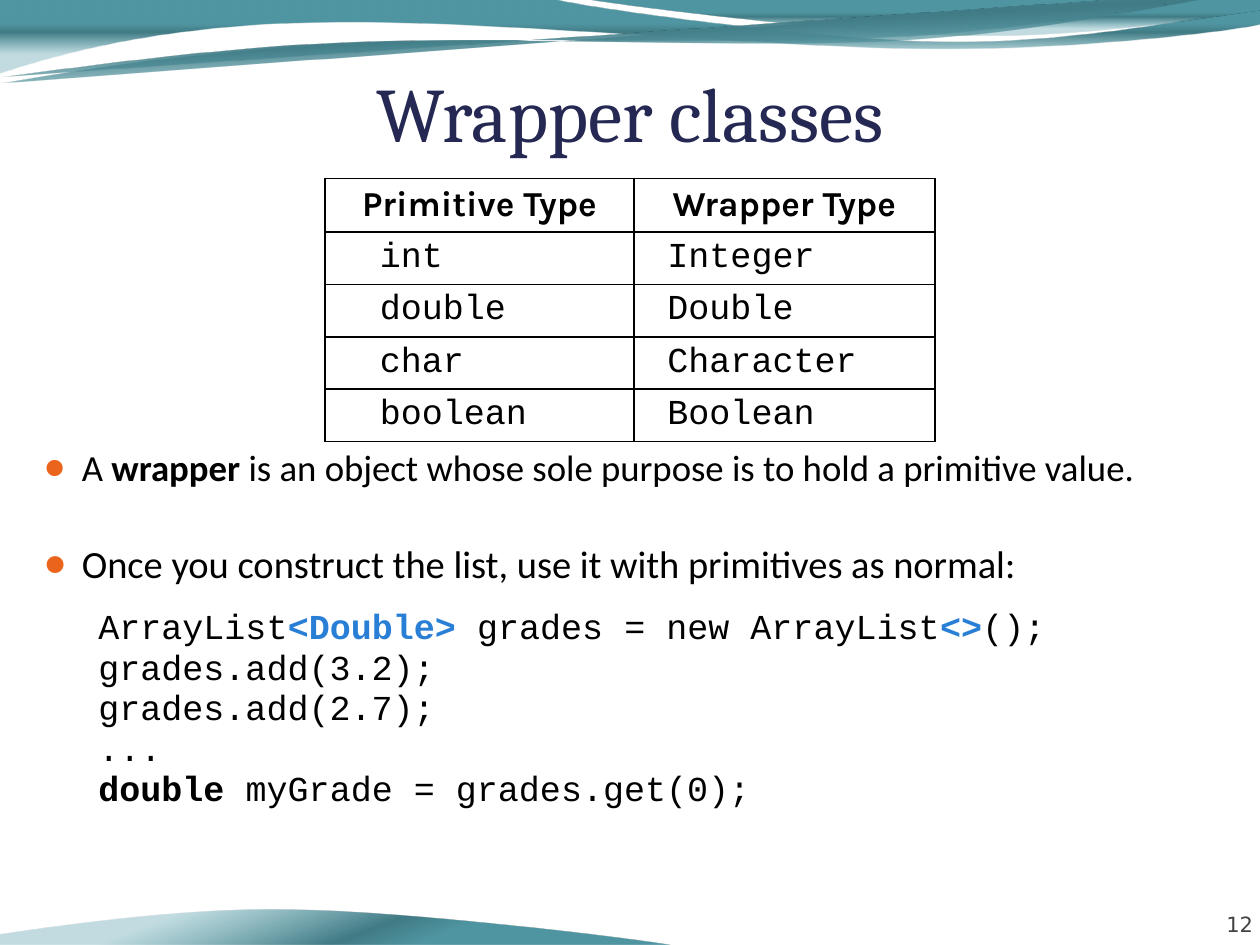
"""Build the slide on wrapper classes."""
import pptx
import pptx.dml.color
import pptx.enum.text
import pptx.oxml
import pptx.oxml.ns
import pptx.util

Pt = pptx.util.Pt
RGB = pptx.dml.color.RGBColor
ALIGN = pptx.enum.text.PP_ALIGN
ANCHOR = pptx.enum.text.MSO_ANCHOR
NS = pptx.oxml.ns.nsdecls("a")
BLACK = RGB(0, 0, 0)
NAVY = RGB(0x24, 0x28, 0x52)
BLUE = RGB(0x29, 0x7F, 0xD5)
GREY = RGB(0x42, 0x42, 0x42)
ORANGE = RGB(0xEB, 0x64, 0x1B)
STOPS = [
    (33, RGB(0x50, 0x96, 0xA2), 100),
    (44, RGB(0x41, 0x7B, 0x85), 100),
    (74, RGB(0x5A, 0xA2, 0xAE), 37),
]
CODE = "Courier New"

TITLE = "Wrapper classes"
NUMBER = "12"
TYPES = [
    ("Primitive Type", "Wrapper Type"),
    ("int", "Integer"),
    ("double", "Double"),
    ("char", "Character"),
    ("boolean", "Boolean"),
]
POINTS = [
    (["A ", ("wrapper", BLACK),
      " is an object whose sole purpose is to hold a primitive value."], 21, 0),
    (["Once you construct the list, use it with primitives as normal:"], 22, 29.6),
]
LINES = [
    ["ArrayList", ("<Double>", BLUE), " grades = new ArrayList", ("<>", BLUE), "();"],
    ["grades.add(3.2);"],
    ["grades.add(2.7);"],
    ["..."],
    [("double ", BLACK), "myGrade = grades.get(0);"],
]
WAVES = [
    (0, 90, True, [
        (0, 0), (317, 0), (343, 6, 478, 24, 546, 24), (615, 24, 690, 10, 720, 4),
        (721, 14), (708, 17, 626, 28, 537, 28), (448, 28, 275, 11, 185, 13),
        (93, 14, 33, 31, -1, 42), (0, 0)]),
    (0, 90, True, [
        (336, 0), (359, 4, 485, 19, 549, 20), (613, 22, 692, 10, 720, 6), (720, 0)]),
    (357.3, 90, False, [
        (0, 30), (35.5, 25.7, 115, 16.4, 201, 17),
        (287, 16.5, 427, 31, 514, 30.2), (600, 29.3, 679, 14.9, 721, 10.9)]),
    (357.3, 90, False, [
        (0, 27), (34, 24.7, 119, 15.6, 205, 16.6),
        (291, 17.7, 430, 29.3, 516, 28.3), (602, 27.3, 679, 14, 721, 10.9)]),
    (180, 70, True, [
        (-1, 518), (21, 522, 148, 537, 212, 538), (276, 540, 355, 528, 383, 524),
        (383, 518)]),
]


def put(para, parts, font=CODE, size=20, color=BLACK, bold=False,
        align=ALIGN.LEFT, left=0, hang=0, before=0, line=None, dot=False):
    para.alignment = align
    para.space_before = Pt(before)
    if line:
        para.line_spacing = line
    props = para._p.get_or_add_pPr()
    props.set("marL", str(Pt(left)))
    props.set("indent", str(Pt(-hang)))
    marks = ["<a:buNone %s/>" % NS]
    if dot:
        marks = [f'<a:buClr {NS}><a:srgbClr val="{ORANGE}"/></a:buClr>',
                 f'<a:buSzPct {NS} val="95000"/>',
                 f'<a:buFont {NS} typeface="Calibri"/>',
                 f'<a:buChar {NS} char="●"/>']
    for mark in marks:
        props.append(pptx.oxml.parse_xml(mark))
    for part in parts:
        words, tint = (part, None) if isinstance(part, str) else part
        run = para.add_run()
        run.text = words
        run.font.name = font
        run.font.size = Pt(size)
        run.font.bold = bold or tint is not None
        run.font.color.rgb = tint or color


def place(shape, left, top, width, height):
    shape.left, shape.top = Pt(left), Pt(top)
    shape.width, shape.height = Pt(width), Pt(height)


def inset(frame, left, top, right, bottom):
    frame.margin_left, frame.margin_top = Pt(left), Pt(top)
    frame.margin_right, frame.margin_bottom = Pt(right), Pt(bottom)
    frame.word_wrap = True
    frame.auto_size = pptx.enum.text.MSO_AUTO_SIZE.NONE


def add_wave(slide, depth, turn, angle, close, parts):
    spots = [(Pt(p[i]), Pt(p[i + 1])) for p in parts for i in range(0, len(p), 2)]
    pen = slide.shapes.build_freeform(*spots[0])
    pen.add_line_segments(spots[1:], close=close)
    wave = pen.convert_to_shape()
    props = wave._element.spPr
    steps = iter(list(props.iter(pptx.oxml.ns.qn("a:lnTo"))))
    for part in parts[1:]:
        step = next(steps)
        if len(part) == 6:
            curve = pptx.oxml.parse_xml(f"<a:cubicBezTo {NS}/>")
            step.addprevious(curve)
            for knot in (step, next(steps), next(steps)):
                curve.append(knot[0])
                knot.getparent().remove(knot)
    wave.rotation = turn
    wave.shadow.inherit = False
    wave.line.fill.background()
    wave.fill.background()
    stops = "".join(
        f'<a:gs pos="{at * 1000}"><a:srgbClr val="{color}">'
        f'<a:alpha val="{alpha * 1000}"/></a:srgbClr></a:gs>'
        for at, color, alpha in STOPS)
    grad = pptx.oxml.parse_xml(
        f'<a:gradFill {NS} rotWithShape="1"><a:gsLst>{stops}</a:gsLst>'
        f'<a:lin ang="{angle * 60000}" scaled="0"/></a:gradFill>')
    props.replace(props.find(pptx.oxml.ns.qn("a:noFill")), grad)
    slide.shapes._spTree.insert(2 + depth, wave._element)


def add_types(slide):
    high = 29.9
    table = slide.shapes.add_table(len(TYPES), 2, Pt(185.8), Pt(102), Pt(348.4),
                                   Pt(high * len(TYPES))).table
    table.first_row = table.horz_banding = False
    for col, width in zip(table.columns, (176.4, 172)):
        col.width = Pt(width)
    for r, row in enumerate(TYPES):
        table.rows[r].height = Pt(high)
        for c, word in enumerate(row):
            cell = table.cell(r, c)
            cell.fill.background()
            props = cell._tc.get_or_add_tcPr()
            for i, side in enumerate("LRTB"):
                props.insert(i, pptx.oxml.parse_xml(
                    f'<a:ln{side} {NS} w="{Pt(1)}"><a:solidFill>'
                    f'<a:srgbClr val="{BLACK}"/></a:solidFill></a:ln{side}>'))
            para = cell.text_frame.paragraphs[0]
            if r:
                put(para, [word], left=24 - 12 * c)
            else:
                put(para, [word], font="Karla", bold=True, align=ALIGN.CENTER)


def main():
    deck = pptx.Presentation()
    deck.slide_width, deck.slide_height = Pt(720), Pt(540)
    slide = deck.slides.add_slide(deck.slide_layouts[1])
    for depth, wave in enumerate(WAVES):
        add_wave(slide, depth, *wave)

    title, body = slide.placeholders
    place(title, 36, 34.6, 648, 55.4)
    inset(title.text_frame, 0, 3.6, 0, 0)
    title.text_frame.vertical_anchor = ANCHOR.BOTTOM
    put(title.text_frame.paragraphs[0], [TITLE], font="Cambria", size=44,
        color=NAVY, align=ALIGN.CENTER)

    place(body, 18, 108, 702, 408)
    frame = body.text_frame
    inset(frame, 7.2, 146, 7.2, 3.6)
    frame.vertical_anchor = ANCHOR.TOP
    for i, (parts, size, gap) in enumerate(POINTS):
        para = frame.add_paragraph() if i else frame.paragraphs[0]
        put(para, parts, font="Calibri", size=size, left=21.6, hang=21.6,
            before=gap, dot=True)
    for i, parts in enumerate(LINES):
        put(frame.add_paragraph(), parts, left=31, line=0.8,
            before=4 if i else 14.8)

    add_types(slide)
    page = slide.shapes.add_textbox(Pt(656), Pt(506), Pt(60), Pt(29)).text_frame
    inset(page, 0, 0, 0, 0)
    page.vertical_anchor = ANCHOR.BOTTOM
    put(page.paragraphs[0], [NUMBER], font="DejaVu Sans", size=12, color=GREY,
        align=ALIGN.RIGHT)
    deck.save("out.pptx")


if __name__ == "__main__":
    main()
